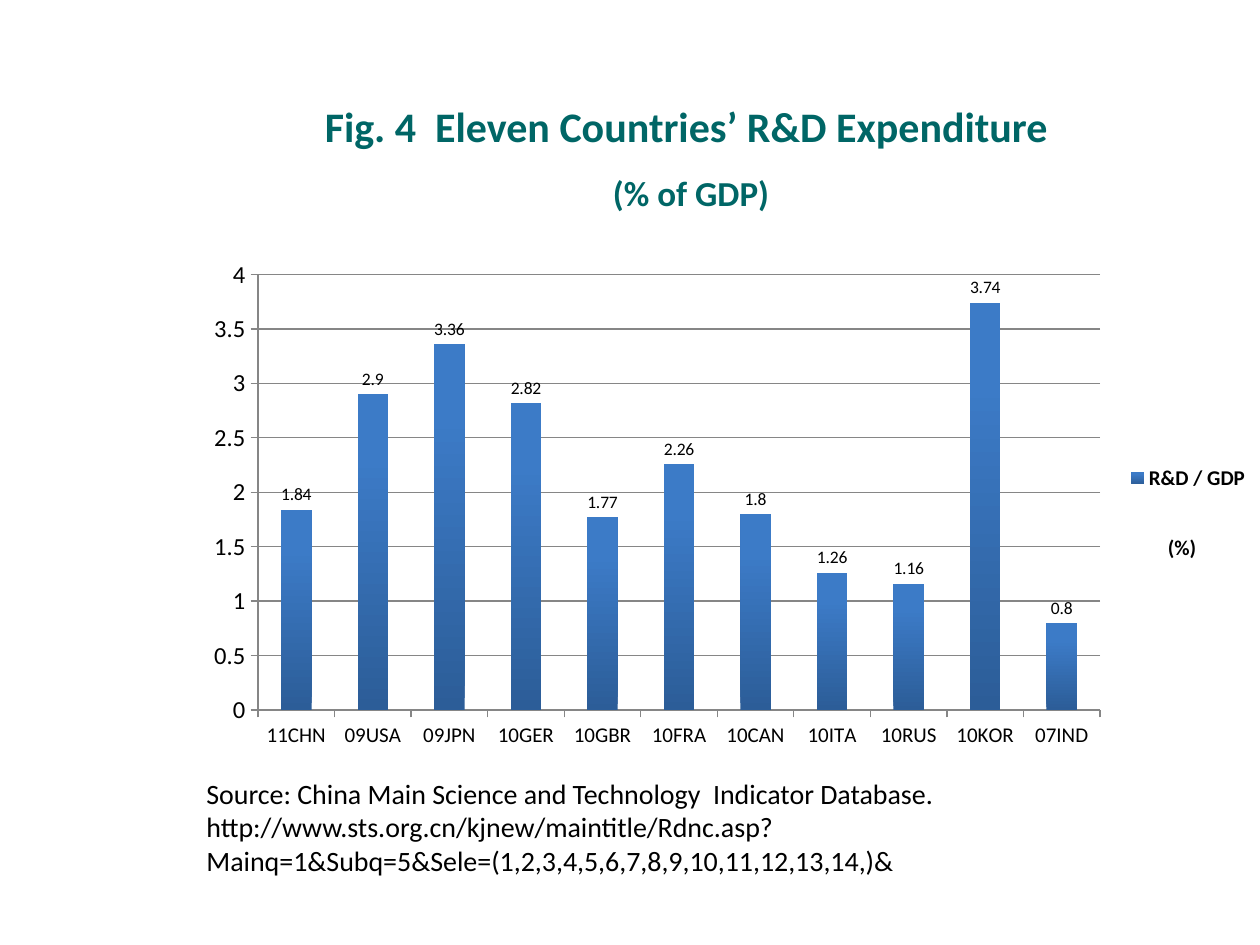
from pptx import Presentation
from pptx.chart.data import CategoryChartData
from pptx.dml.color import RGBColor
from pptx.enum.chart import XL_CHART_TYPE, XL_LABEL_POSITION, XL_LEGEND_POSITION, XL_TICK_MARK
from pptx.enum.text import MSO_ANCHOR, PP_ALIGN
from pptx.oxml import parse_xml
from pptx.oxml.ns import nsdecls, qn
from pptx.util import Inches, Pt

FONT = "Calibri"
TEAL, BLACK, GRAY = "006666", "000000", "868686"
RD_SHARE = {
    "11CHN": 1.84, "09USA": 2.9, "09JPN": 3.36, "10GER": 2.82,
    "10GBR": 1.77, "10FRA": 2.26, "10CAN": 1.8, "10ITA": 1.26,
    "10RUS": 1.16, "10KOR": 3.74, "07IND": 0.8,
}
SOURCE = ("Source: China Main Science and Technology  Indicator Database. "
          "http://www.sts.org.cn/kjnew/maintitle/Rdnc.asp?"
          "Mainq=1&Subq=5&Sele=(1,2,3,4,5,6,7,8,9,10,11,12,13,14,)&")


def rgb(value):
    return RGBColor.from_string(value)


def set_font(font, size, color=BLACK, bold=False):
    font.name, font.size, font.bold = FONT, Pt(size), bold
    font.color.rgb = rgb(color)


def add_text(p, text, size, color=BLACK, bold=False):
    r = p.add_run()
    r.text = text
    set_font(r.font, size, color, bold)


def place(sp, left, top, width, height):
    sp.left, sp.top = Inches(left), Inches(top)
    sp.width, sp.height = Inches(width), Inches(height)


def set_layout(element, after, target="", **fractions):
    """Pin a chart part at fractions of the chart's size."""
    for old in element.findall(qn("c:layout")):
        element.remove(old)
    inner = f'<c:layoutTarget val="{target}"/>' if target else ""
    inner += "".join(f'<c:{k}Mode val="edge"/>' for k in "xy")
    inner += "".join(f'<c:{k} val="{v}"/>' for k, v in fractions.items())
    layout = parse_xml(f'<c:layout {nsdecls("c")}><c:manualLayout>{inner}'
                       "</c:manualLayout></c:layout>")
    previous = element.find(qn(after)) if after else None
    element.insert(0 if previous is None else element.index(previous) + 1, layout)


def add_title(slide):
    title = slide.shapes.title
    place(title, 1.54, 0.52, 7.89, 1.25)
    tf = title.text_frame
    tf.word_wrap = True
    tf.vertical_anchor = MSO_ANCHOR.MIDDLE
    p = tf.paragraphs[0]
    p.alignment, p.line_spacing = PP_ALIGN.CENTER, 1.5
    add_text(p, "Fig. 4  Eleven Countries’ R&D Expenditure ", 24, TEAL, True)
    p.add_line_break()
    add_text(p, "(% of GDP)", 20, TEAL, True)


def format_axis(axis, size):
    axis.major_tick_mark = XL_TICK_MARK.OUTSIDE
    axis.minor_tick_mark = XL_TICK_MARK.NONE
    axis.format.line.color.rgb = rgb(GRAY)
    set_font(axis.tick_labels.font, size)


def format_bars(plot):
    plot.gap_width, plot.vary_by_categories = 150, False
    fill = plot.series[0].format.fill
    fill.gradient()
    fill.gradient_angle = 90
    for stop, color, position in zip(fill.gradient_stops, ("2C5D98", "3C7BC7"), (0, 0.8)):
        stop.color.rgb, stop.position = rgb(color), position
    plot.has_data_labels = True
    labels = plot.data_labels
    labels.show_value = True
    labels.position = XL_LABEL_POSITION.OUTSIDE_END
    set_font(labels.font, 10)


def add_rd_chart(slide):
    data = CategoryChartData()
    data.categories = list(RD_SHARE)
    data.add_series("R&D / GDP ", list(RD_SHARE.values()))
    chart = slide.shapes.add_chart(
        XL_CHART_TYPE.COLUMN_CLUSTERED, Inches(1.54), Inches(1.55),
        Inches(8.46), Inches(4.49), data).chart
    set_font(chart.font, 10)
    format_bars(chart.plots[0])
    format_axis(chart.category_axis, 12)
    values = chart.value_axis
    format_axis(values, 14)
    values.minimum_scale, values.maximum_scale, values.major_unit = 0, 4, 0.5
    values.major_gridlines.format.line.color.rgb = rgb(GRAY)
    set_layout(chart.plots[0]._element.getparent(), None, "inner",
               x=0.06, y=0.14, w=0.79, h=0.77)

    chart.has_title = True
    title = chart.chart_title
    add_text(title.text_frame.paragraphs[0], "(%)", 12, bold=True)
    title.include_in_layout = True if hasattr(title, "include_in_layout") else None
    set_layout(title._element, "c:tx", x=0.91, y=0.59)

    chart.has_legend = True
    legend = chart.legend
    legend.position = XL_LEGEND_POSITION.RIGHT
    legend.include_in_layout = False
    set_font(legend.font, 12, bold=True)
    set_layout(legend._element, "c:legendPos", x=0.87, y=0.47, w=0.13, h=0.06)


def add_source(slide):
    tf = slide.shapes.add_textbox(
        Inches(1.54), Inches(6.11), Inches(8.19), Inches(0.91)).text_frame
    tf.word_wrap = True
    add_text(tf.paragraphs[0], SOURCE, 16)


def main():
    prs = Presentation()
    prs.slide_width, prs.slide_height = Inches(10), Inches(7.5)
    slide = prs.slides.add_slide(prs.slide_layouts[5])
    add_title(slide)
    add_rd_chart(slide)
    add_source(slide)
    prs.save("out.pptx")


if __name__ == "__main__":
    main()
